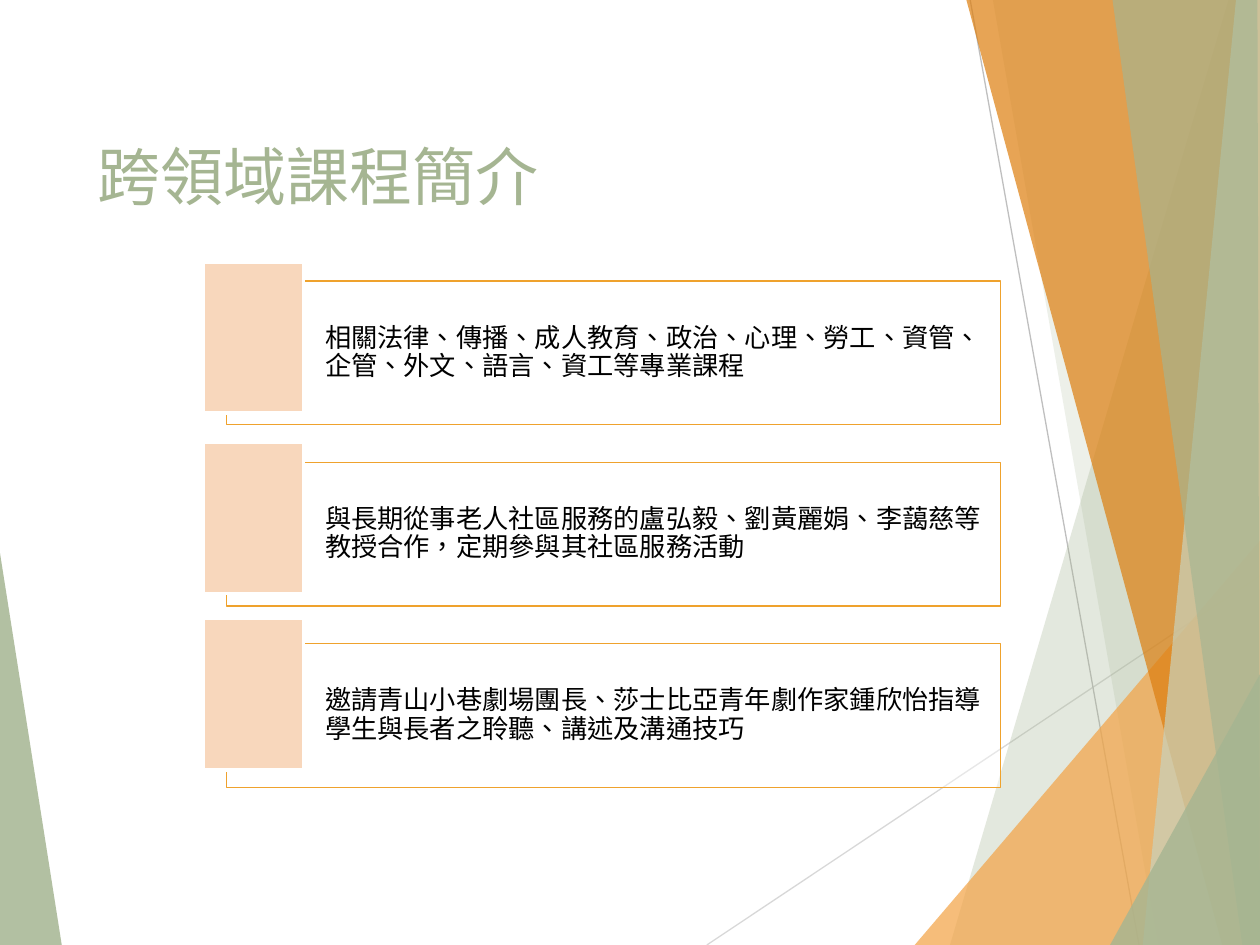
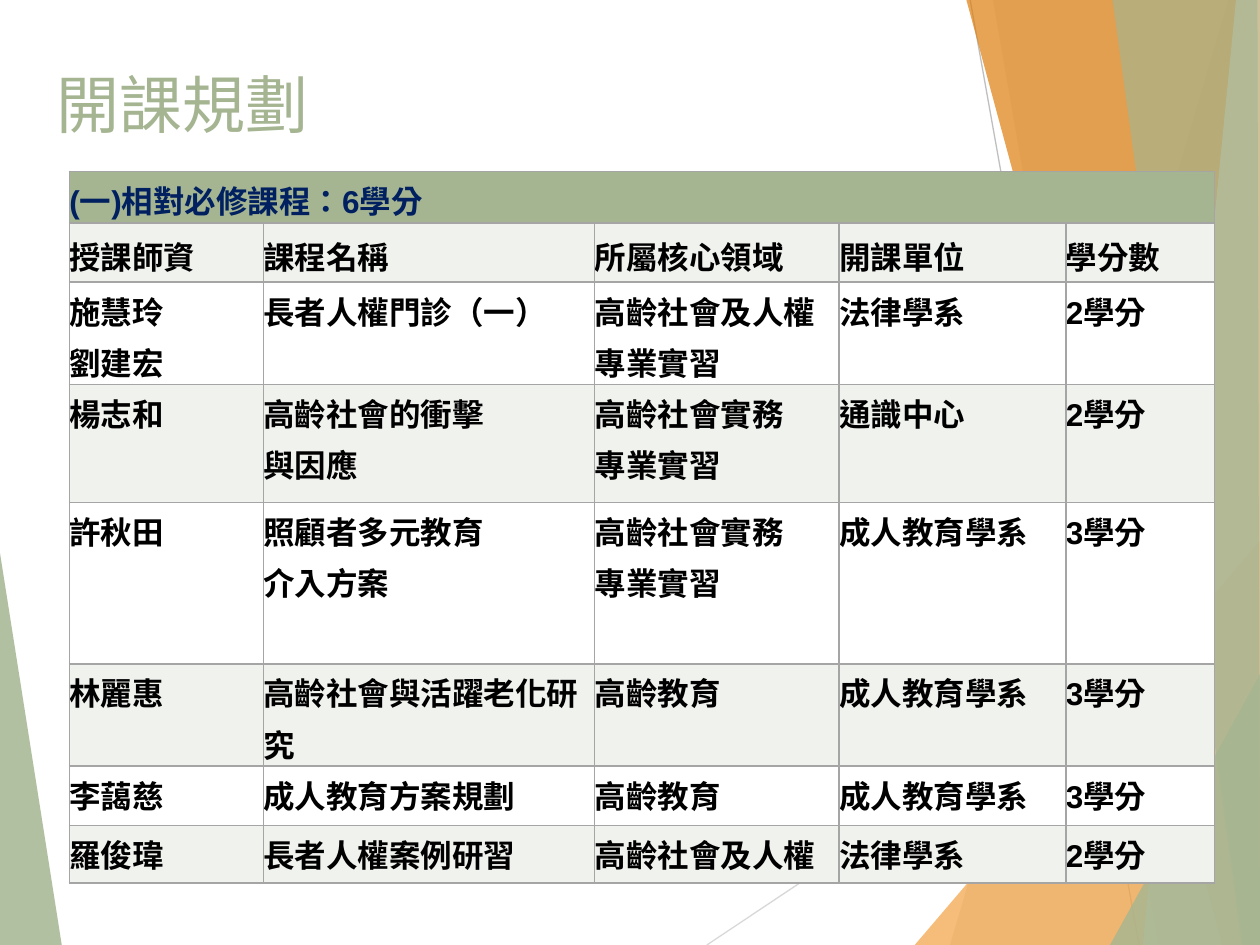
from lxml.etree import SubElement
from pptx import Presentation
from pptx.dml.color import RGBColor
from pptx.enum.dml import MSO_LINE
from pptx.enum.lang import MSO_LANGUAGE_ID
from pptx.enum.shapes import MSO_CONNECTOR, MSO_SHAPE
from pptx.enum.text import MSO_ANCHOR, PP_ALIGN
from pptx.oxml import parse_xml
from pptx.oxml.ns import nsdecls, qn
from pptx.util import Inches, Pt

COLORS = {
    "sage": "A5B592", "pale_sage": "C8D2BC", "orange": "F3A447", "dark_orange": "DD7E0E",
    "box_line": "EFA22D", "peach": "F8D7BC", "white": "FFFFFF", "black": "000000",
    "navy": "002060", "band": "F0F2EE", "border": "A5A5A5",
    "light_line": "D8D8D8", "gray_line": "BFBFBF",
}
rgb = {name: RGBColor.from_string(value) for name, value in COLORS.items()}


def fill_shape(sp, color, opacity=100):
    """Give a shape a solid fill, opacity in percent, and no shadow."""
    sp.shadow.inherit = False
    sp.fill.solid()
    sp.fill.fore_color.rgb = rgb[color]
    if opacity < 100:
        clr = sp.element.spPr.find(qn("a:solidFill")).find(qn("a:srgbClr"))
        SubElement(clr, qn("a:alpha"), val=str(opacity * 1000))


def format_text(tf, font, size, color, bold=False, spacing=None):
    for p in tf.paragraphs:
        p.alignment = PP_ALIGN.LEFT
        p.line_spacing = spacing
        for r in p.runs:
            r.font.name = font
            r.font.size = Pt(size)
            r.font.bold = bold
            r.font.color.rgb = rgb[color]
            r.font.language_id = MSO_LANGUAGE_ID.TRADITIONAL_CHINESE


prs = Presentation()
prs.slide_width, prs.slide_height = Inches(10), Inches(7.5)
layout = prs.slide_layouts[5]

# Titles
titles = [
    ("跨領域課程簡介", 0.67, 0.67, 6.94, 1.44),
    ("開課規劃", 0.35, 0.36, 9.5, 0.92),
]
for text, left, top, width, height in titles:
    title = prs.slides.add_slide(layout).shapes.title
    title.left, title.top = Inches(left), Inches(top)
    title.width, title.height = Inches(width), Inches(height)
    title.text_frame.text = text
    title.text_frame.vertical_anchor = MSO_ANCHOR.MIDDLE
    format_text(title.text_frame, "Lato", 36, "sage")
intro, plan = prs.slides

# Facets shared by both slides: drawn once, then moved to the layout
facet_lines = [
    (5.61, 7.5, 10, 4.57, "light_line"),
    (7.7, 0, 9.04, 7.5, "gray_line"),
]
facets = [
    ("sage", 85, [(0, 4.39), (0.49, 7.5), (0, 7.5)]),
    ("sage", 30, [(9.75, 0), (7.54, 7.5), (10, 7.5), (10, 0)]),
    ("sage", 20, [(7.88, 0), (9.19, 7.5), (10, 7.5), (10, 0)]),
    ("orange", 72, [(7.26, 7.5), (10, 4.29), (10, 7.5)]),
    ("dark_orange", 70, [(7.67, 0), (9.7, 7.5), (10, 7.5), (10, 0)]),
    ("pale_sage", 70, [(9.81, 0), (9.07, 7.5), (10, 7.5), (10, 0)]),
    ("sage", 65, [(8.83, 0), (9.86, 7.5), (10, 7.5), (9.98, 0)]),
    ("sage", 80, [(8.81, 7.5), (10, 5.35), (10, 7.5)]),
]
decor = []
for x1, y1, x2, y2, color in facet_lines:
    line = intro.shapes.add_connector(
        MSO_CONNECTOR.STRAIGHT, Inches(x1), Inches(y1), Inches(x2), Inches(y2))
    line.line.color.rgb = rgb[color]
    line.line.width = Pt(0.75)
    SubElement(line.element.spPr, qn("a:effectLst"))
    decor.append(line)
for color, opacity, points in facets:
    corners = [(Inches(x), Inches(y)) for x, y in points]
    builder = intro.shapes.build_freeform(*corners[0])
    builder.add_line_segments(corners[1:])
    facet = builder.convert_to_shape()
    fill_shape(facet, color, opacity)
    facet.line.fill.background()
    decor.append(facet)
layout_title = layout.placeholders[0].element
for sp in decor:
    layout_title.addprevious(sp.element)

# Slide 1: course descriptions
courses = [
    (2.08, "相關法律、傳播、成人教育、政治、心理、勞工、資管、企管、外文、語言、資工等專業課程"),
    (3.51, "與長期從事老人社區服務的盧弘毅、劉黃麗娟、李藹慈等教授合作，定期參與其社區服務活動"),
    (4.91, "邀請青山小巷劇場團長、莎士比亞青年劇作家鍾欣怡指導學生與長者之聆聽、講述及溝通技巧"),
]
for i, (tab_top, text) in enumerate(courses):
    box = intro.shapes.add_shape(
        MSO_SHAPE.RECTANGLE, Inches(1.8), Inches(2.23 + 1.44 * i), Inches(6.14), Inches(1.14))
    fill_shape(box, "white", 40)
    box.line.color.rgb = rgb["box_line"]
    box.line.width = Pt(0.79)
    tf = box.text_frame
    tf.word_wrap = True
    tf.vertical_anchor = MSO_ANCHOR.MIDDLE
    tf.margin_left = Inches(0.78)
    tf.margin_right = tf.margin_top = tf.margin_bottom = Inches(0.06)
    tf.text = text
    format_text(tf, "Arial", 15, "black", spacing=0.9)

    tab = intro.shapes.add_shape(
        MSO_SHAPE.RECTANGLE, Inches(1.61), Inches(tab_top), Inches(0.8), Inches(1.2))
    fill_shape(tab, "peach")
    tab.line.color.rgb = rgb["white"]
    tab.line.width = Pt(2)

# Slide 2: course table
rows = [
    ["(一)相對必修課程：6學分", "", "", "", ""],
    ["授課師資", "課程名稱", "所屬核心領域", "開課單位", "學分數"],
    ["施慧玲\n劉建宏", "長者人權門診（一）", "高齡社會及人權\n專業實習", "法律學系", "2學分"],
    ["楊志和", "高齡社會的衝擊\n與因應", "高齡社會實務\n專業實習", "通識中心", "2學分"],
    ["許秋田", "照顧者多元教育\n介入方案", "高齡社會實務\n專業實習", "成人教育學系", "3學分"],
    ["林麗惠", "高齡社會與活躍老化研究", "高齡教育", "成人教育學系", "3學分"],
    ["李藹慈", "成人教育方案規劃", "高齡教育", "成人教育學系", "3學分"],
    ["羅俊瑋", "長者人權案例研習", "高齡社會及人權", "法律學系", "2學分"],
]
col_widths = [1.54, 2.63, 1.94, 1.8, 1.18]
row_heights = [0.41, 0.47, 0.81, 0.94, 1.28, 0.81, 0.47, 0.46]
table = plan.shapes.add_table(
    len(rows), len(col_widths), Inches(0.55), Inches(1.36),
    Inches(sum(col_widths)), Inches(sum(row_heights))).table
for col, width in zip(table.columns, col_widths):
    col.width = Inches(width)
for row, height in zip(table.rows, row_heights):
    row.height = Inches(height)
table.cell(0, 0).merge(table.cell(0, len(col_widths) - 1))

for i, texts in enumerate(rows):
    fill = "sage" if i == 0 else "band" if i % 2 else "white"
    for j, text in enumerate(texts):
        cell = table.cell(i, j)
        cell.margin_left = cell.margin_right = cell.margin_top = cell.margin_bottom = 0
        cell.vertical_anchor = MSO_ANCHOR.MIDDLE if i < 2 else MSO_ANCHOR.TOP
        cell.fill.solid()
        cell.fill.fore_color.rgb = rgb[fill]
        if text:
            cell.text_frame.text = text
            format_text(cell.text_frame, "Arial", 18, "black" if i else "navy", True, 1.12)
        tc_pr = cell._tc.get_or_add_tcPr()
        for k, side in enumerate(["lnL", "lnR", "lnT", "lnB"]):
            tc_pr.insert(k, parse_xml(
                f'<a:{side} {nsdecls("a")} w="12700"><a:solidFill>'
                f'<a:srgbClr val="{COLORS["border"]}"/></a:solidFill></a:{side}>'))

prs.save("out.pptx")
